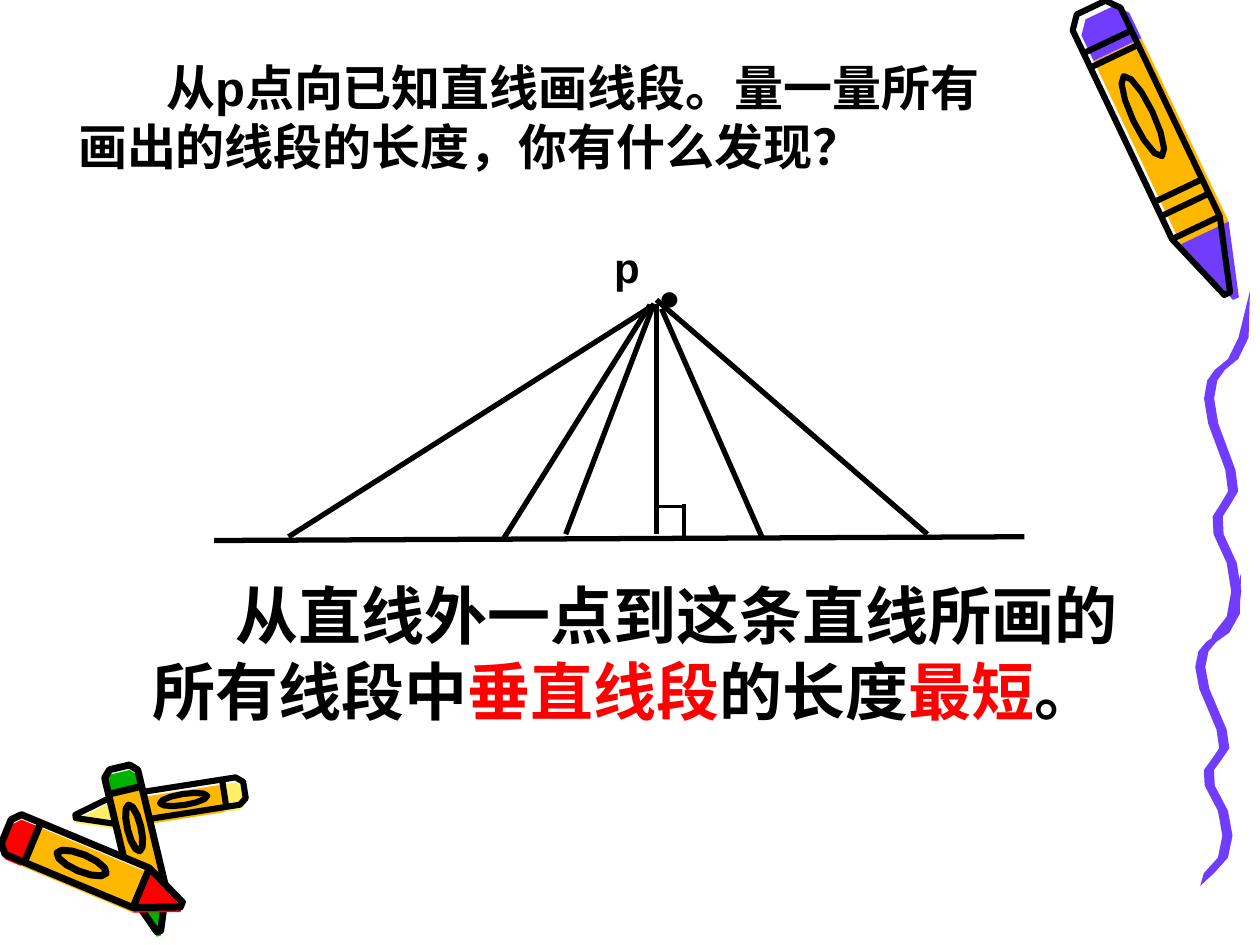
from collections import namedtuple
from math import cos, hypot, pi, sin

from pptx import Presentation
from pptx.dml.color import RGBColor
from pptx.enum.shapes import MSO_CONNECTOR, MSO_SHAPE
from pptx.enum.text import MSO_ANCHOR, MSO_AUTO_SIZE, PP_ALIGN
from pptx.oxml import parse_xml
from pptx.oxml.ns import nsdecls
from pptx.util import Inches, Pt

STRAIGHT = MSO_CONNECTOR.STRAIGHT
RECTANGLE = MSO_SHAPE.RECTANGLE
TOP = MSO_ANCHOR.TOP
NO_FIT = MSO_AUTO_SIZE.NONE
LEFT, CENTER = PP_ALIGN.LEFT, PP_ALIGN.CENTER
TITLE_ONLY = 5

FONT = "Arial"
BLACK, WHITE, RED, GREEN = "000000", "FFFFFF", "FF0000", "00B200"
PURPLE, ORANGE, YELLOW = "703DFF", "FFB800", "FFEF66"

QUESTION = [
    [("从p点向已知直线画线段。量一量所有", BLACK)],
    [("画出的线段的长度，你有什么发现？", BLACK)],
]
CONCLUSION = [[
    ("从直线外一点到这条直线所画的所有线段中", BLACK),
    ("垂直线段", RED),
    ("的长度", BLACK),
    ("最短", RED),
    ("。", BLACK),
]]
QUESTION_AREA = (0.52, 0.41, 8.7, 1.03)
CONCLUSION_AREA = (0.88, 4.53, 8.16, 1.31)
LABELS = [
    ("．", 44, (5.02, 1.8, 0.86, 0.83)),
    ("p", 24, (4.59, 1.87, 0.77, 0.5)),
]

BASE_LINE = ((1.7, 4.29), (8.13, 4.26))
PERPENDICULAR = ((5.21, 2.41), (5.21, 4.24))
OBLIQUES = [
    ((5.21, 2.38), (7.36, 4.24)),
    ((5.19, 2.42), (2.29, 4.26)),
    ((5.25, 2.45), (6.05, 4.27)),
    ((5.16, 2.42), (4, 4.27)),
    ((5.19, 2.41), (4.49, 4.24)),
]
RIGHT_ANGLE = [((5.21, 4.02), (5.43, 4.02)), ((5.43, 4), (5.43, 4.29))]

Crayon = namedtuple("Crayon", "tail tip width accent fill_shift ink bands oval_center")
CRAYONS = [
    Crayon((8.66, 0.06), (9.74, 2.33), 0.42, PURPLE, (0.07, 0.04), 3.5, (0.12, 0.17, 0.64, 0.69), 0.38),
    Crayon((1.94, 6.27), (0.6, 6.48), 0.22, YELLOW, (0, 0.04), 3.5, (0.12,), 0.36),
    Crayon((0.95, 6.09), (1.26, 7.39), 0.27, GREEN, (0, 0.04), 4, (0.14,), 0.37),
    Crayon((0.05, 6.6), (1.44, 7.18), 0.34, RED, (0, 0.04), 4, (0.15,), 0.43),
]
CAP_END, CONE_START = 0.13, 0.77
CAP = [(0, -0.3), (0, 0.3), (0.04, 0.5), (CAP_END, 0.5), (CAP_END, -0.5), (0.04, -0.5)]
BARREL = [(CAP_END, -0.5), (CAP_END, 0.5), (CONE_START, 0.5), (CONE_START, -0.5)]
CONE = [(CONE_START, -0.5), (CONE_START, 0.5), (1, 0.06), (1, -0.06)]
SILHOUETTE = CAP[:3] + [CONE[1], CONE[2], CONE[3], CONE[0]] + CAP[5:]
OVAL_LENGTH, OVAL_WIDTH, OVAL_CORNERS = 0.28, 0.4, 12

WAVE = [
    (1, 0), (0.86, 0.13), (0.63, 0.19), (0.34, 0.22), (0.17, 0.25), (0.1, 0.3),
    (0.19, 0.37), (0.57, 0.5), (0.63, 0.56), (0.44, 0.6), (0.29, 0.63), (0.31, 0.68),
    (0.6, 0.76), (0.7, 0.84), (0.6, 0.91), (0.29, 0.96), (0.1, 1),
]
WAVE_AREAS = [(9.49, 4.55, 0.36, 2.48), (9.56, 2.31, 0.36, 2.84)]
RIBBON_WIDTH = 0.08


def color(value):
    return RGBColor.from_string(value)


def draw_polygon(page, points, fill=None, ink=None):
    corners = [(Inches(x), Inches(y)) for x, y in points]
    builder = page.shapes.build_freeform(*corners[0], scale=1.0)
    builder.add_line_segments(corners[1:], close=True)
    shape = builder.convert_to_shape()
    shape.shadow.inherit = False
    if fill:
        shape.fill.solid()
        shape.fill.fore_color.rgb = color(fill)
    else:
        shape.fill.background()
    if ink:
        shape.line.color.rgb = color(BLACK)
        shape.line.width = Pt(ink)
    else:
        shape.line.fill.background()


def draw_line(page, start, end, width=3):
    line = page.shapes.add_connector(STRAIGHT, *map(Inches, start + end))
    line.line.color.rgb = color(BLACK)
    line.line.width = Pt(width)
    line._element.spPr.append(parse_xml(f"<a:effectLst {nsdecls('a')}/>"))


def draw_crayon(page, crayon):
    (left, top), (tip_x, tip_y) = crayon.tail, crayon.tip
    run, drop = tip_x - left, tip_y - top
    thickness = crayon.width / hypot(run, drop)

    def place(points, shift=(0, 0)):
        return [(left + along * run - across * thickness * drop + shift[0],
                 top + along * drop + across * thickness * run + shift[1])
                for along, across in points]

    draw_polygon(page, place(SILHOUETTE), fill=WHITE)
    for part, fill in [(CAP, crayon.accent), (BARREL, ORANGE), (CONE, crayon.accent)]:
        draw_polygon(page, place(part, crayon.fill_shift), fill=fill)

    angles = [2 * pi * step / OVAL_CORNERS for step in range(OVAL_CORNERS)]
    oval = [(crayon.oval_center + OVAL_LENGTH / 2 * cos(angle), OVAL_WIDTH / 2 * sin(angle))
            for angle in angles]
    for part in (SILHOUETTE, oval):
        draw_polygon(page, place(part), ink=crayon.ink)
    for along in crayon.bands + (CONE_START,):
        draw_line(page, *place([(along, -0.5), (along, 0.5)]), crayon.ink)


def draw_ribbon(page, area):
    left, top, width, height = area
    middle = [(left + x * width, top + y * height) for x, y in WAVE]
    inner = middle[1:-1]
    half = RIBBON_WIDTH / 2
    right_side = [(x + half, y) for x, y in inner]
    left_side = [(x - half, y) for x, y in reversed(inner)]
    draw_polygon(page, [middle[0]] + right_side + [middle[-1]] + left_side, fill=PURPLE)


def write(box, paragraphs, size, align, indent=0):
    frame = box.text_frame
    frame.word_wrap = True
    frame.auto_size = NO_FIT
    frame.vertical_anchor = TOP
    for index, spans in enumerate(paragraphs):
        para = frame.add_paragraph() if index else frame.paragraphs[0]
        para.alignment = align
        if indent and index == 0:
            para._p.get_or_add_pPr().set("indent", str(Inches(indent)))
        for text, tint in spans:
            span = para.add_run()
            span.text = text
            span.font.name = FONT
            span.font.size = Pt(size)
            span.font.bold = True
            span.font.color.rgb = color(tint)


def main():
    deck = Presentation()
    deck.slide_width, deck.slide_height = Inches(10), Inches(7.5)
    page = deck.slides.add_slide(deck.slide_layouts[TITLE_ONLY])

    for area in WAVE_AREAS:
        draw_ribbon(page, area)
    for crayon in CRAYONS:
        draw_crayon(page, crayon)

    for start, end in [BASE_LINE, PERPENDICULAR] + OBLIQUES:
        draw_line(page, start, end)
    for start, end in RIGHT_ANGLE:
        draw_line(page, start, end, 2.25)
    for text, size, area in LABELS:
        label = page.shapes.add_textbox(*map(Inches, area))
        write(label, [[(text, BLACK)]], size, CENTER)

    title = page.shapes.title
    title.left, title.top, title.width, title.height = map(Inches, QUESTION_AREA)
    write(title, QUESTION, 28, LEFT, 0.7)

    answer = page.shapes.add_shape(RECTANGLE, *map(Inches, CONCLUSION_AREA))
    answer.shadow.inherit = False
    answer.fill.solid()
    answer.fill.fore_color.rgb = color(WHITE)
    answer.line.color.rgb = color(WHITE)
    answer.line.width = Pt(0.75)
    write(answer, CONCLUSION, 36, CENTER, 0.82)
    deck.save("out.pptx")


if __name__ == "__main__":
    main()
